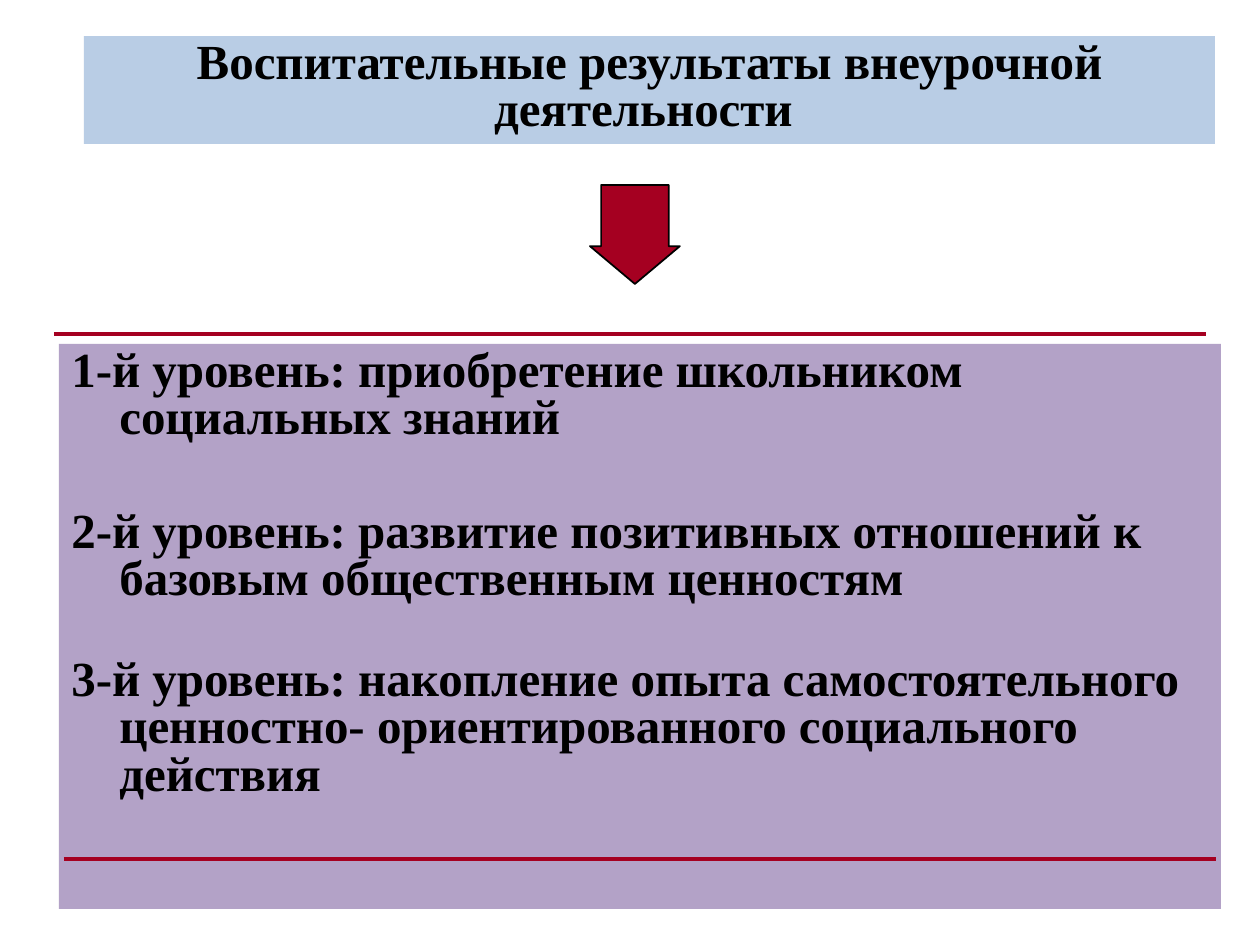
import pptx
import pptx.util
import pptx.dml.color
import pptx.enum.shapes
import pptx.enum.text
import pptx.oxml.ns
import lxml.etree

EMU_PER_PX = 914400 // 126
RED = "A50021"
BLACK = "000000"
SHAPES = pptx.enum.shapes.MSO_SHAPE
ALIGN = pptx.enum.text.PP_ALIGN
TITLE = "Воспитательные результаты внеурочной деятельности "
LEVELS = [
    ("1-й уровень: приобретение школьником социальных знаний", 0),
    ("2-й уровень: развитие позитивных отношений к базовым общественным ценностям", 38),
    ("3-й уровень: накопление опыта самостоятельного ценностно- ориентированного социального действия", 31),
]


def px(length):
    return pptx.util.Emu(length * EMU_PER_PX)


def color(value):
    return pptx.dml.color.RGBColor.from_string(value)


def set_values(target, values):
    for name, value in values.items():
        setattr(target, name, value)


def add_block(slide, kind, box, fill):
    shape = slide.shapes.add_shape(kind, *map(px, box))
    shape.shadow.inherit = False
    shape.fill.solid()
    shape.fill.fore_color.rgb = color(fill)
    shape.line.fill.background()
    return shape


def add_text_panel(slide, box, fill, texts, alignment, hanging=0):
    shape = add_block(slide, SHAPES.RECTANGLE, box, fill)
    frame = shape.text_frame
    set_values(frame, {
        "word_wrap": True,
        "vertical_anchor": pptx.enum.text.MSO_ANCHOR.TOP,
    })
    for index, (text, space) in enumerate(texts):
        paragraph = frame.add_paragraph() if index else frame.paragraphs[0]
        set_values(paragraph, {
            "alignment": alignment,
            "line_spacing": 0.8,
            "space_before": pptx.util.Pt(space),
        })
        if hanging:
            properties = paragraph._p.get_or_add_pPr()
            properties.set("marL", str(px(hanging)))
            properties.set("indent", str(px(-hanging)))
        run = paragraph.add_run()
        run.text = text
        set_values(run.font, {
            "name": "Times New Roman",
            "size": pptx.util.Pt(28),
            "bold": True,
        })
        run.font.color.rgb = color(BLACK)


def add_down_arrow(slide, box):
    arrow = add_block(slide, SHAPES.DOWN_ARROW, box, RED)
    arrow.adjustments[0] = 0.75
    arrow.adjustments[1] = 0.42
    arrow.line.color.rgb = color(BLACK)
    arrow.line.width = pptx.util.Pt(1)


def add_rule(slide, left, top, width):
    rule = slide.shapes.add_connector(
        pptx.enum.shapes.MSO_CONNECTOR.STRAIGHT,
        px(left), px(top), px(left + width), px(top),
    )
    rule.line.color.rgb = color(RED)
    rule.line.width = pptx.util.Pt(2.25)
    lxml.etree.SubElement(rule._element.spPr, pptx.oxml.ns.qn("a:effectLst"))


def main():
    presentation = pptx.Presentation()
    set_values(presentation, {"slide_width": px(1260), "slide_height": px(945)})
    slide = presentation.slides.add_slide(presentation.slide_layouts[6])
    add_text_panel(slide, (84, 36, 1131, 108), "B9CDE5", [(TITLE, 0)], ALIGN.CENTER)
    add_down_arrow(slide, (590, 185, 90, 99))
    add_text_panel(slide, (59, 344, 1162, 565), "B3A2C7", LEVELS, ALIGN.LEFT, 48)
    for left, top in ((54, 334), (64, 859)):
        add_rule(slide, left, top, 1152)
    presentation.save("out.pptx")


if __name__ == "__main__":
    main()
